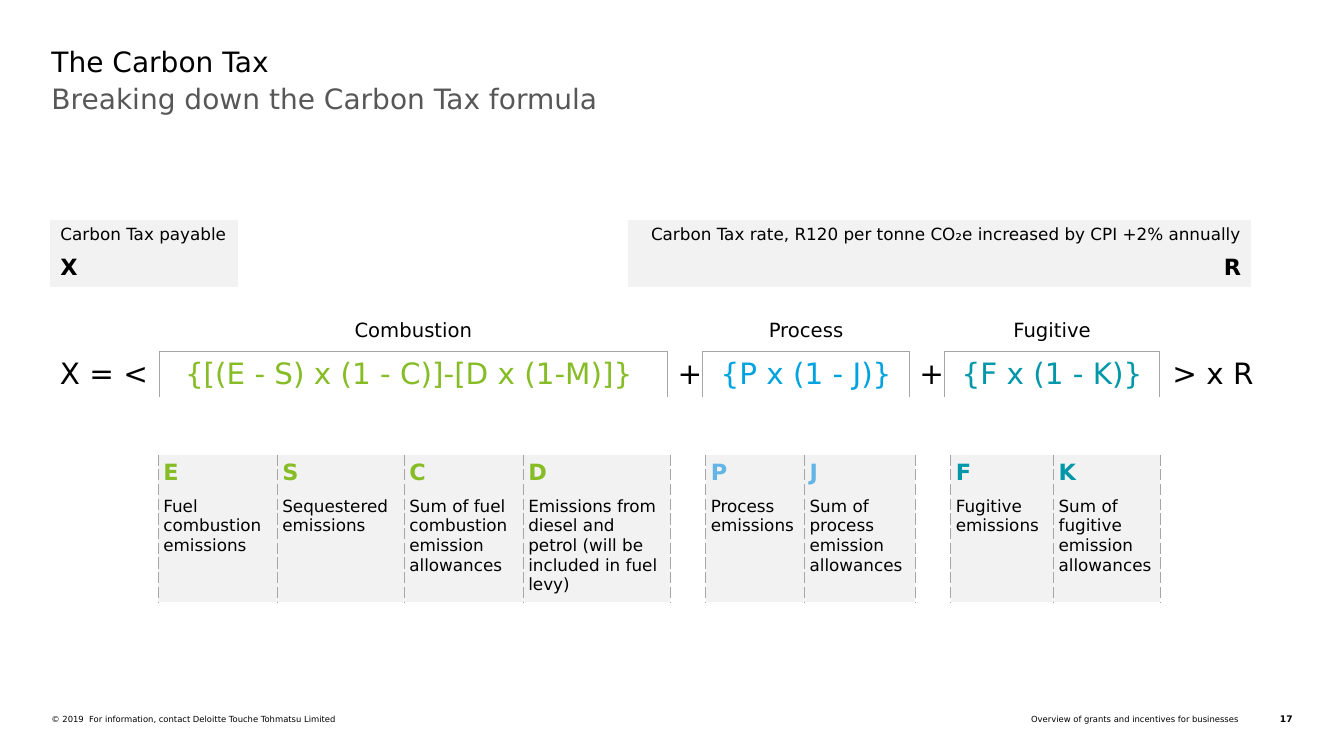
from dataclasses import dataclass

from lxml import etree
from pptx import Presentation
from pptx.dml.color import RGBColor
from pptx.enum.text import MSO_ANCHOR, PP_ALIGN
from pptx.oxml.ns import qn
from pptx.util import Inches, Pt

LEFT, CENTER, RIGHT = PP_ALIGN.LEFT, PP_ALIGN.CENTER, PP_ALIGN.RIGHT
TOP, MIDDLE = MSO_ANCHOR.TOP, MSO_ANCHOR.MIDDLE

BLACK = RGBColor(0x00, 0x00, 0x00)
GREY = RGBColor(0x57, 0x57, 0x57)
RULE_GREY = RGBColor(0xA6, 0xA6, 0xA6)
PANEL = RGBColor(0xF2, 0xF2, 0xF2)
GREEN = RGBColor(0x86, 0xBC, 0x25)
BLUE = RGBColor(0x00, 0xA3, 0xE0)
LIGHT_BLUE = RGBColor(0x62, 0xB5, 0xE5)
TEAL = RGBColor(0x00, 0x97, 0xA9)

FONT = "DejaVu Sans"
GRID = Inches(0.1)  # side of one grid square
SLIDE_COLS, SLIDE_ROWS = 133.3, 75
GAP = 3.5  # grid columns between two emission groups
PLAIN_TABLE = "{2D5ABB26-0587-4C30-8999-92F81FD0307C}"


@dataclass
class EmissionGroup:
    name: str
    formula: str
    formula_color: RGBColor
    letter_color: RGBColor
    formula_width: float
    terms: list  # letter, meaning, width in grid columns


GROUPS = [
    EmissionGroup("Combustion", "{[(E - S) x (1 - C)]-[D x (1-M)]} ", GREEN, GREEN, 50.4, [
        ("E", "Fuel combustion emissions", 11.8),
        ("S", "Sequestered emissions", 12.6),
        ("C", "Sum of fuel combustion emission allowances", 11.8),
        ("D", "Emissions from diesel and petrol (will be included in fuel levy)", 14.6),
    ]),
    EmissionGroup("Process", "{P x (1 - J)}", BLUE, LIGHT_BLUE, 20.5, [
        ("P", "Process emissions", 9.8),
        ("J", "Sum of process emission allowances", 11),
    ]),
    EmissionGroup("Fugitive", "{F x (1 - K)}", TEAL, TEAL, 21.3, [
        ("F", "Fugitive emissions", 10.2),
        ("K", "Sum of fugitive emission allowances", 10.6),
    ]),
]


def grid(count):
    return round(count * GRID)


def write(frame, text, size, color=BLACK, bold=False, align=LEFT):
    frame.text = text
    paragraph = frame.paragraphs[0]
    paragraph.alignment = align
    for run in paragraph.runs:
        run.font.name, run.font.size = FONT, Pt(size)
        run.font.bold, run.font.color.rgb = bold, color


def add_line(slide, box, text, size, **style):
    """Place text without margins in a box of grid units."""
    frame = slide.shapes.add_textbox(*map(grid, box)).text_frame
    frame.margin_left = frame.margin_right = frame.margin_top = frame.margin_bottom = 0
    frame.word_wrap = True
    write(frame, text, size, **style)


def add_plain_table(slide, left, top, widths, heights):
    """Add a table without style, bands or fills, measured in grid units."""
    frame = slide.shapes.add_table(len(heights), len(widths), grid(left), grid(top),
                                   grid(sum(widths)), grid(sum(heights)))
    table = frame.table
    table.first_row = table.horz_banding = False
    frame._element.find(".//" + qn("a:tableStyleId")).text = PLAIN_TABLE
    for column, width in zip(table.columns, widths):
        column.width = grid(width)
    for row, height in zip(table.rows, heights):
        row.height = grid(height)
    for cell in table.iter_cells():
        cell.fill.background()
    return table


def fill_panel(cell):
    cell.fill.solid()
    cell.fill.fore_color.rgb = PANEL


def set_borders(cell, sides, dash="solid"):
    """Draw the sides, named in the order L, R, T, B, ahead of the cell's fill."""
    properties = cell._tc.get_or_add_tcPr()
    for index, side in enumerate(sides):
        line = etree.Element(qn("a:ln" + side), w=str(Pt(1)))
        solid = etree.SubElement(line, qn("a:solidFill"))
        etree.SubElement(solid, qn("a:srgbClr"), val=str(RULE_GREY))
        etree.SubElement(line, qn("a:prstDash"), val=dash)
        properties.insert(index, line)


def add_heading(slide, left, width):
    add_line(slide, (left, 4.4, width, 3.7), "The Carbon Tax", 20)
    add_line(slide, (left, 8.1, width, 8.3), "Breaking down the Carbon Tax formula", 20, color=GREY)


def add_key(slide, left, top, width, meaning, letter, align):
    table = add_plain_table(slide, left, top, [width], [3, 3.6])
    for row, (text, size, bold) in enumerate([(meaning, 12, False), (letter, 16, True)]):
        cell = table.cell(row, 0)
        fill_panel(cell)
        write(cell.text_frame, text, size, bold=bold, align=align)


def add_formula(slide, left, top):
    columns = [("", "X = < ", BLACK, 11)]
    for group in GROUPS:
        if group is not GROUPS[0]:
            columns.append(("", "+", BLACK, GAP))
        columns.append((group.name, group.formula, group.formula_color, group.formula_width))
    columns.append(("", "> x R ", BLACK, 10.6))

    table = add_plain_table(slide, left, top, [column[-1] for column in columns], [4.1, 4.4])
    for index, (name, formula, color, _) in enumerate(columns):
        heading, part = table.cell(0, index), table.cell(1, index)
        heading.vertical_anchor = part.vertical_anchor = MIDDLE
        write(part.text_frame, formula, 21, color=color, align=CENTER)
        if name:
            write(heading.text_frame, name, 14, align=CENTER)
            set_borders(heading, "B")
            set_borders(part, "LRT")


def add_legend(slide, left, top):
    columns = []
    for group in GROUPS:
        if columns:
            columns.append(("", "", BLACK, GAP))
        columns += [(letter, meaning, group.letter_color, width)
                    for letter, meaning, width in group.terms]

    table = add_plain_table(slide, left, top, [column[-1] for column in columns], [3.6, 10.7])
    for index, (letter, meaning, color, _) in enumerate(columns):
        for row, (text, size, ink) in enumerate([(letter, 16, color), (meaning, 12, BLACK)]):
            cell = table.cell(row, index)
            margin = grid(0.5) if text else 0
            cell.margin_left = cell.margin_right = cell.margin_top = cell.margin_bottom = margin
            cell.vertical_anchor = TOP
            set_borders(cell, "LR", "sysDash")
            if text:
                fill_panel(cell)
                write(cell.text_frame, text, size, color=ink, bold=row == 0)


def add_footer(slide, left, top):
    add_line(slide, (left, top, 58.6, 1),
             "© 2019  For information, contact Deloitte Touche Tohmatsu Limited", 6)
    add_line(slide, (69.3, top, 53.5, 1),
             "Overview of grants and incentives for businesses", 6, align=RIGHT)
    add_line(slide, (124.8, top, 3.4, 1.1), "17", 6.5, bold=True, align=RIGHT)


def main():
    deck = Presentation()
    deck.slide_width, deck.slide_height = grid(SLIDE_COLS), grid(SLIDE_ROWS)
    slide = deck.slides.add_slide(deck.slide_layouts[6])
    add_heading(slide, 5.1, 123.1)
    add_key(slide, 5, 21.8, 18.6, "Carbon Tax payable", "X", LEFT)
    add_key(slide, 62.3, 21.8, 61.8,
            "Carbon Tax rate, R120 per tonne CO₂e increased by CPI +2% annually", "R", RIGHT)
    add_formula(slide, 4.8, 30.8)
    add_legend(slide, 15.7, 45.1)
    add_footer(slide, 5.1, 70.8)
    deck.save("out.pptx")


if __name__ == "__main__":
    main()
